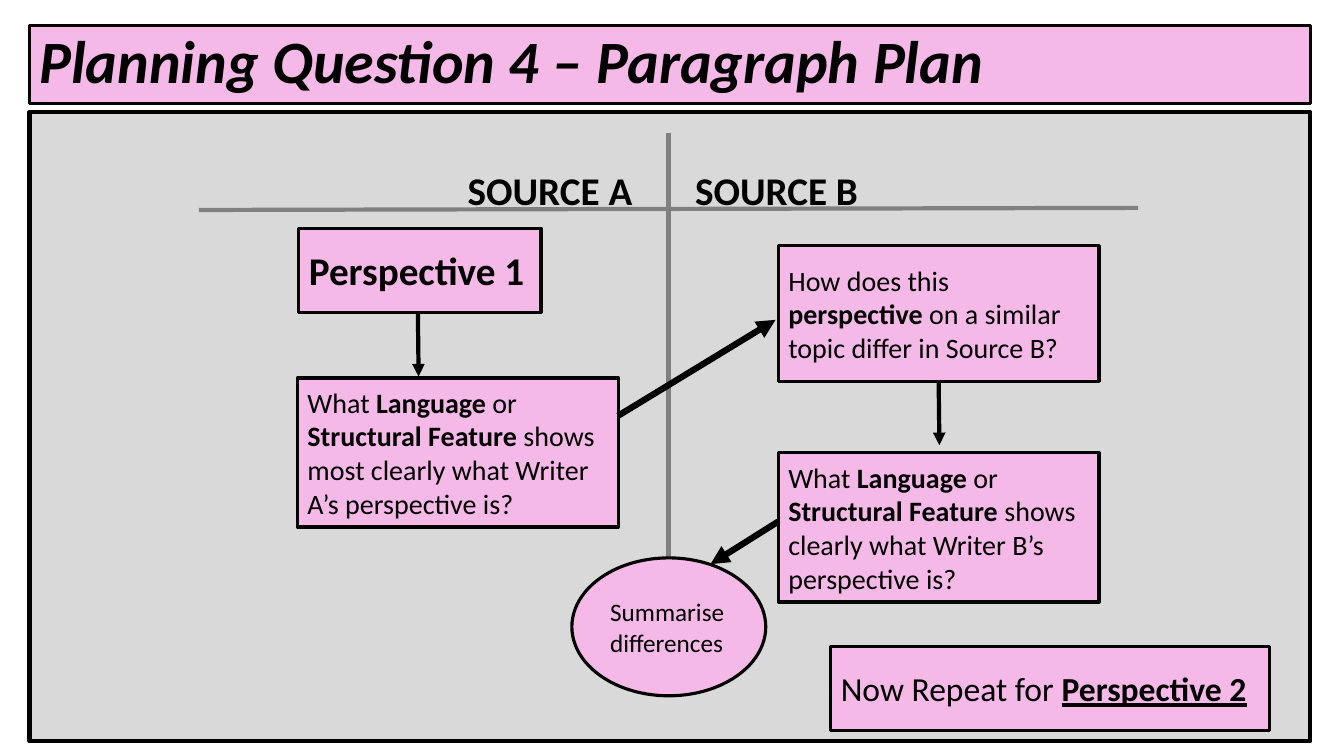
from lxml.etree import SubElement
from pptx import Presentation
from pptx.dml.color import RGBColor
from pptx.enum.shapes import MSO_CONNECTOR, MSO_SHAPE
from pptx.enum.text import MSO_ANCHOR, PP_ALIGN
from pptx.oxml.ns import qn
from pptx.util import Pt

COLOURS = {"pink": "F5B9E8", "panel": "D9D9D9", "ink": "000000", "divider": "808080"}
FONT = "Calibri"
BOX_WIDTH = 229
LEFT_BOX, RIGHT_BOX = 212.5, 556


def colour(name):
    return RGBColor.from_string(COLOURS[name])


def write(text_frame, segments, size, bold=False, italic=False):
    """Write (text, emphasised) segments as the runs of one paragraph."""
    text_frame.word_wrap = True
    paragraph = text_frame.paragraphs[0]
    paragraph.alignment = PP_ALIGN.LEFT
    for text, emphasised in segments:
        run = paragraph.add_run()
        run.text = text
        run.font.name = FONT
        run.font.size = Pt(size)
        run.font.bold = bold or emphasised
        run.font.italic = italic
        run.font.color.rgb = colour("ink")
    return paragraph


def add_box(slide, left, top, width, height, fill="pink", line=2.25, kind=MSO_SHAPE.RECTANGLE):
    shape = slide.shapes.add_shape(kind, Pt(left), Pt(top), Pt(width), Pt(height))
    shape.shadow.inherit = False
    shape.fill.solid()
    shape.fill.fore_color.rgb = colour(fill)
    shape.line.color.rgb = colour("ink")
    shape.line.width = Pt(line)
    shape.text_frame.vertical_anchor = MSO_ANCHOR.MIDDLE
    return shape


def add_heading(slide, text, left):
    box = slide.shapes.add_textbox(Pt(left), Pt(118.5), Pt(150), Pt(34))
    frame = box.text_frame
    frame.margin_left = frame.margin_right = frame.margin_top = frame.margin_bottom = 0
    write(frame, [(text, True)], 28)


def add_line(slide, start, end, width, name="ink", arrow=False):
    points = [Pt(value) for value in (*start, *end)]
    connector = slide.shapes.add_connector(MSO_CONNECTOR.STRAIGHT, *points)
    connector.line.color.rgb = colour(name)
    connector.line.width = Pt(width)
    if arrow:
        SubElement(connector.line._get_or_add_ln(), qn("a:tailEnd"), type="triangle")
    SubElement(connector._element.spPr, qn("a:effectLst"))


def feature_question(ending):
    return [("What ", False), ("Language", True), (" or ", False),
            ("Structural Feature ", True), (ending, False)]


def main():
    presentation = Presentation()
    presentation.slide_width, presentation.slide_height = Pt(960), Pt(540)
    slide = presentation.slides.add_slide(presentation.slide_layouts[6])

    # Panel and title
    add_box(slide, 21, 80, 915, 449.5, fill="panel", line=3)
    title = add_box(slide, 21, 18, 915, 56)
    paragraph = write(title.text_frame, [("Planning Question 4 – Paragraph Plan", False)],
                      42.9, bold=True, italic=True)
    paragraph.line_spacing = 0.9

    # Two source columns
    add_heading(slide, "SOURCE A", 334)
    add_heading(slide, "SOURCE B", 496.5)
    add_line(slide, (477.5, 95), (477.5, 476), 3, "divider")
    add_line(slide, (142, 150), (813, 148.5), 3, "divider")

    # Question boxes
    boxes = [
        (213.5, 163, 173, 60, 28, [("Perspective 1", True)]),
        (RIGHT_BOX, 175.5, BOX_WIDTH, 97, 20,
         [("How does this ", False), ("perspective ", True),
          ("on a similar topic differ in Source B?", False)]),
        (LEFT_BOX, 270, BOX_WIDTH, 106.5, 20,
         feature_question("shows most clearly what Writer A’s perspective is?")),
        (RIGHT_BOX, 323.5, BOX_WIDTH, 106.5, 20,
         feature_question("shows clearly what Writer B’s perspective is?")),
    ]
    for left, top, width, height, size, segments in boxes:
        write(add_box(slide, left, top, width, height).text_frame, segments, size)

    # Arrows from step to step
    for start, end, width in [
        ((298.5, 223), (299, 269), 3),
        ((441.5, 297), (554, 228.5), 4.5),
        ((670.5, 272.5), (671, 318), 3),
        ((556, 372.5), (507.5, 403), 4.5),
    ]:
        add_line(slide, start, end, width, arrow=True)

    # Summary and repeat instruction
    summary = add_box(slide, 408.5, 398.5, 138.5, 98.5, kind=MSO_SHAPE.OVAL)
    write(summary.text_frame, [("Summarise differences", False)], 18)
    repeat = add_box(slide, 593.5, 461.5, 313.5, 60)
    paragraph = write(repeat.text_frame, [("Now Repeat for ", False), ("Perspective 2", True)], 24)
    paragraph.runs[1].font.underline = True

    presentation.save("out.pptx")


if __name__ == "__main__":
    main()
